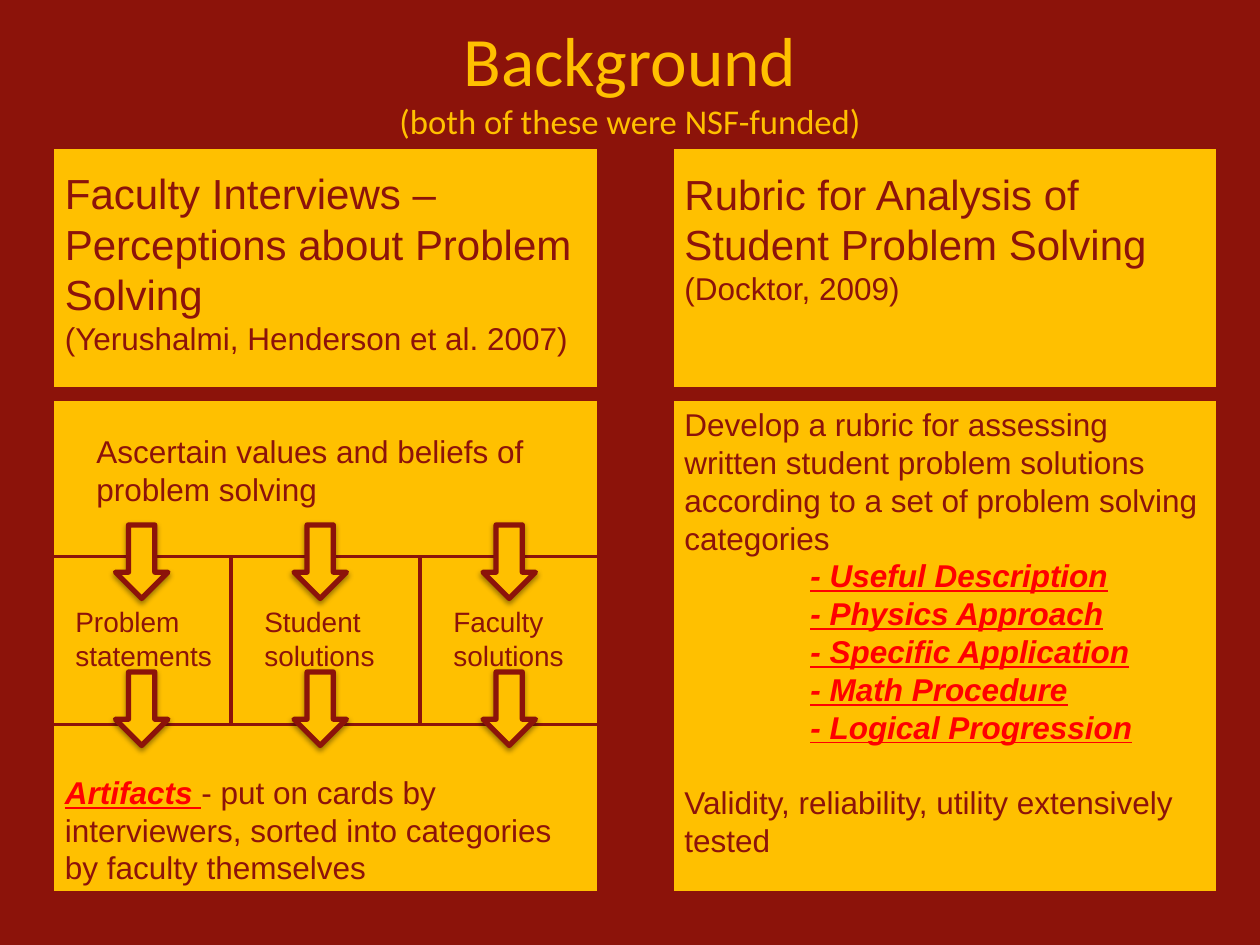
from lxml import etree
from pptx import Presentation
from pptx.dml.color import RGBColor
from pptx.enum.shapes import MSO_SHAPE
from pptx.enum.text import MSO_ANCHOR, MSO_AUTO_SIZE, PP_ALIGN
from pptx.oxml.ns import qn
from pptx.util import Inches, Pt

RECTANGLE, DOWN_ARROW = MSO_SHAPE.RECTANGLE, MSO_SHAPE.DOWN_ARROW
TOP, CENTER = MSO_ANCHOR.TOP, PP_ALIGN.CENTER
NO_FIT, GROW = MSO_AUTO_SIZE.NONE, MSO_AUTO_SIZE.SHAPE_TO_FIT_TEXT
TITLE_ONLY = 5

THEME = {
    "maroon": RGBColor(0x8C, 0x13, 0x0A),
    "gold": RGBColor(0xFF, 0xC0, 0x00),
    "red": RGBColor(0xFF, 0x00, 0x00),
    "title_font": "Calibri",
    "body_font": "Arial",
    "title": Pt(39.6),
    "subtitle": Pt(19.8),
    "heading": Pt(24),
    "body": Pt(18),
    "label": Pt(16),
}
BASE = {"name": THEME["body_font"], "size": THEME["body"]}
PLAIN = {**BASE, "color": THEME["maroon"]}
HEADING = {**PLAIN, "size": THEME["heading"]}
LABEL = {**PLAIN, "size": THEME["label"]}
KEYWORD = {**BASE, "color": THEME["red"], "bold": True, "italic": True, "underline": True}

deck = Presentation()
deck.slide_width, deck.slide_height = Inches(10), Inches(7.5)
UNIT = deck.slide_width // 120  # the grid has 120 columns and 90 rows

page = deck.slides.add_slide(deck.slide_layouts[TITLE_ONLY])
page.background.fill.solid()
page.background.fill.fore_color.rgb = THEME["maroon"]


def add_box(kind, area, line_width):
    """Add a gold shape with a maroon outline; area is in grid units."""
    box = page.shapes.add_shape(kind, *(round(v * UNIT) for v in area))
    box.shadow.inherit = False
    box.fill.solid()
    box.fill.fore_color.rgb = THEME["gold"]
    box.line.color.rgb = THEME["maroon"]
    box.line.width = Pt(line_width)
    return box


def add_spans(para, spans):
    for text, style in spans:
        span = para.add_run()
        span.text = text
        for key, value in style.items():
            if key == "color":
                span.font.color.rgb = value
            else:
                setattr(span.font, key, value)


# Title, ending above the panels
title = page.shapes.title
for key, value in {"left": 6, "top": 1.6, "width": 108, "height": 12.1}.items():
    setattr(title, key, round(value * UNIT))
frame = title.text_frame
for key, value in {"auto_size": NO_FIT, "vertical_anchor": TOP, "word_wrap": True,
                   "margin_top": 0, "margin_bottom": 0}.items():
    setattr(frame, key, value)
para = frame.paragraphs[0]
para.alignment = CENTER
title_style = {"name": THEME["title_font"], "size": THEME["title"], "color": THEME["gold"]}
add_spans(para, [("Background", title_style)])
para.add_line_break()
add_spans(para, [("(both of these were NSF-funded)", {**title_style, "size": THEME["subtitle"]})])

# Panels
LEFT, RIGHT, PANEL = 5, 64, 52
for left, top, height in [(LEFT, 14, 23), (RIGHT, 14, 23), (LEFT, 38, 16),
                          (RIGHT, 38, 47), (LEFT, 69, 16)]:
    add_box(RECTANGLE, (left, top, PANEL, height), 2)

# Three artifact cells, each with its label area and arrow column
artifacts = [
    # cell left, cell width, arrow left, label left, label width, label
    (5, 17, 11, 6, 16, "Problem statements"),
    (22, 18, 28, 24, 13, "Student solutions"),
    (40, 17, 46, 42, 14, "Faculty solutions"),
]
for cell_left, cell_width, *_ in artifacts:
    add_box(RECTANGLE, (cell_left, 53, cell_width, 16), 2)

# Texts: area in grid units, then paragraphs as lists of spans
texts = [
    ((LEFT, 15.4, PANEL, 19.4), [
        [("Faculty Interviews – Perceptions about Problem Solving", HEADING)],
        [("(Yerushalmi, Henderson et al. 2007)", PLAIN)]]),
    ((RIGHT, 15.45, PANEL, 14.5), [
        [("Rubric for Analysis of Student Problem Solving", HEADING)],
        [("(Docktor, 2009)", PLAIN)]]),
    ((8, 40.55, 46, 8.5), [[("Ascertain values and beliefs of problem solving", PLAIN)]]),
    ((LEFT, 73, PANEL, 12.1), [[
        ("Artifacts ", KEYWORD),
        ("- put on cards by interviewers, sorted into categories by faculty themselves", PLAIN)]]),
    ((RIGHT, 38, PANEL, 48.5), [
        [("Develop a rubric for assessing written student problem solutions "
          "according to a set of problem solving categories", PLAIN)],
        *([(f"- {category}", KEYWORD)] for category in (
            "Useful Description", "Physics Approach", "Specific Application",
            "Math Procedure", "Logical Progression")),
        [("Validity, reliability, utility extensively tested", PLAIN)]]),
]
for _, _, _, left, width, label in artifacts:
    texts.append(((left, 57, width, 7.7), [[(label, LABEL)]]))

for area, paragraphs in texts:
    frame = page.shapes.add_textbox(*(round(v * UNIT) for v in area)).text_frame
    frame.word_wrap = True
    frame.auto_size = GROW
    for index, spans in enumerate(paragraphs):
        para = frame.paragraphs[0] if index == 0 else frame.add_paragraph()
        add_spans(para, spans)
        previous_is_category = index > 0 and paragraphs[index - 1][0][1] is KEYWORD
        if spans[0][1] is KEYWORD and index > 0:
            para._p.get_or_add_pPr().set("marL", str(Inches(1)))
        elif previous_is_category:
            para.space_before = Pt(21.5)

# Arrows into and out of the cells
for top in (50, 64):
    for _, _, left, *_ in artifacts:
        arrow = add_box(DOWN_ARROW, (left, top, 5, 7), 3)
        effects = arrow._element.spPr.find(qn("a:effectLst"))
        shadow = etree.SubElement(effects, qn("a:outerShdw"), blurRad=str(Pt(3.1)),
                                  dist=str(Pt(1.6)), dir="5400000", rotWithShape="0")
        color = etree.SubElement(shadow, qn("a:srgbClr"), val="000000")
        etree.SubElement(color, qn("a:alpha"), val="38000")

deck.save("out.pptx")
